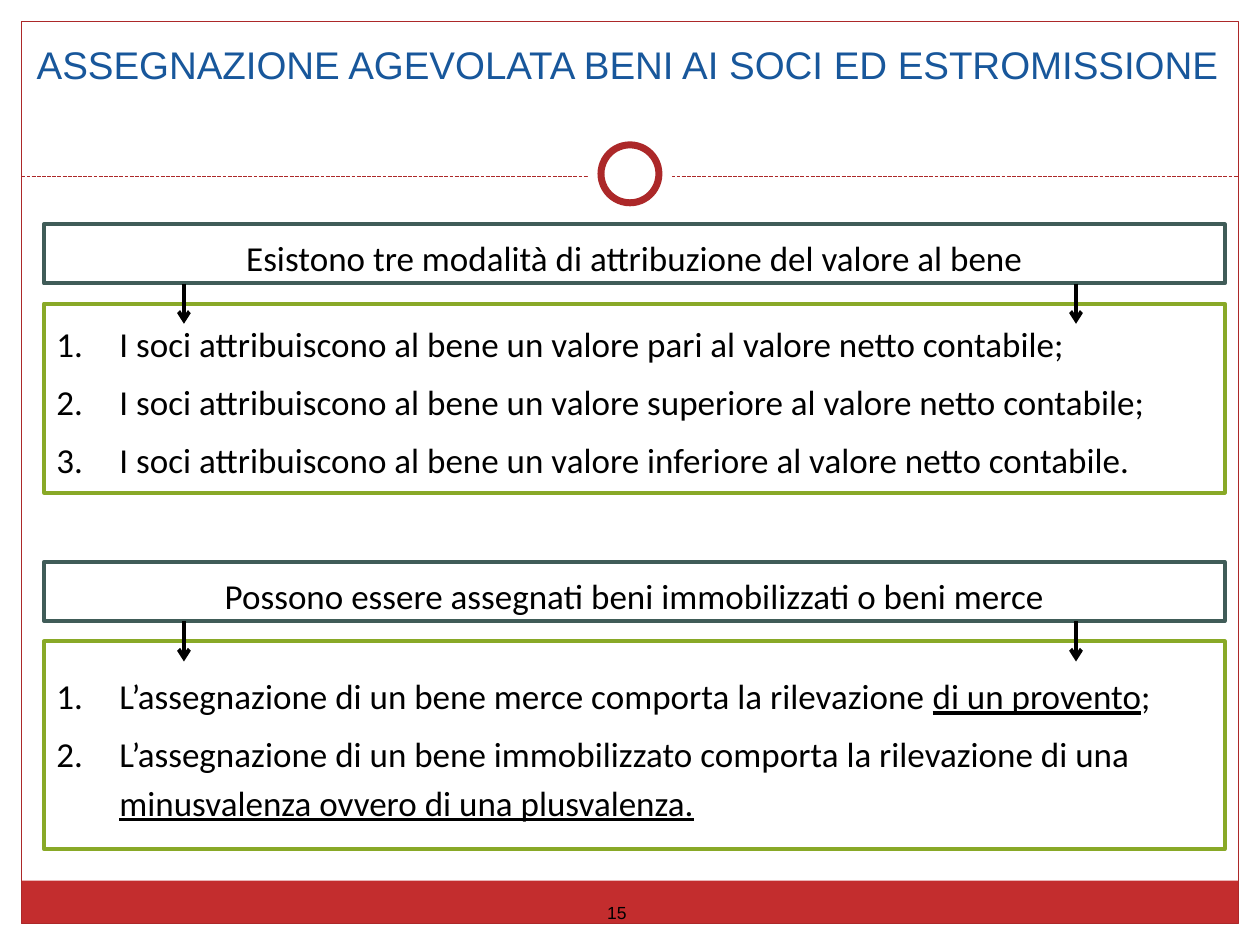
import pptx
import pptx.util
import pptx.dml.color
import pptx.enum.dml
import pptx.enum.shapes
import pptx.enum.text
import pptx.oxml.ns
from lxml import etree

Inches, Pt = pptx.util.Inches, pptx.util.Pt
SHAPE = pptx.enum.shapes.MSO_SHAPE
ALIGN = pptx.enum.text.PP_ALIGN
ANCHOR = pptx.enum.text.MSO_ANCHOR
qn = pptx.oxml.ns.qn

COLORS = {
    "white": "FFFFFF", "black": "000000", "band": "C32D2E", "frame": "AC2829",
    "heading": "405C58", "list": "89A927", "title": "18579B",
}


def rgb(name):
    return pptx.dml.color.RGBColor.from_string(COLORS[name])


def add_box(slide, box, fill=None, line=None, width=0.75, kind=SHAPE.RECTANGLE):
    shape = slide.shapes.add_shape(kind, *map(Inches, box))
    shape.shadow.inherit = False
    if fill:
        shape.fill.solid()
        shape.fill.fore_color.rgb = rgb(fill)
    else:
        shape.fill.background()
    if line:
        shape.line.color.rgb = rgb(line)
        shape.line.width = Pt(width)
    else:
        shape.line.fill.background()
    return shape


def add_line(slide, start, end, color, width):
    line = slide.shapes.add_connector(
        pptx.enum.shapes.MSO_CONNECTOR.STRAIGHT, *map(Inches, start + end))
    line.line.color.rgb = rgb(color)
    line.line.width = Pt(width)
    etree.SubElement(line._element.spPr, qn("a:effectLst"))
    return line


def add_run(paragraph, text, font, size, color="black", underline=None):
    run = paragraph.add_run()
    run.text = text
    run.font.name = font
    run.font.size = Pt(size)
    run.font.color.rgb = rgb(color)
    run.font.underline = underline


def add_label(slide, box, text, size, color, anchor):
    frame = slide.shapes.add_textbox(*map(Inches, box)).text_frame
    frame.word_wrap = True
    frame.vertical_anchor = anchor
    frame.paragraphs[0].alignment = ALIGN.CENTER
    add_run(frame.paragraphs[0], text, "Arial", size, color)


def number_paragraph(paragraph):
    properties = paragraph._p.get_or_add_pPr()
    properties.set("marL", str(Inches(0.5)))
    properties.set("indent", str(-Inches(0.5)))
    etree.SubElement(properties, qn("a:buFont"), typeface="+mj-lt")
    etree.SubElement(properties, qn("a:buAutoNum"), type="arabicPeriod")


def add_frame(slide, box):
    """Red border and footer band, with the dashed divider and its ring."""
    left, top, width, height = box
    band_height = 0.34
    add_box(slide, (left, top + height - band_height, width, band_height), fill="band")
    add_box(slide, box, line="frame")

    divider_y = top + 1.23
    divider = add_line(slide, (left, divider_y), (left + width, divider_y), "frame", 0.75)
    divider.line.dash_style = pptx.enum.dml.MSO_LINE.SQUARE_DOT
    divider.line._ln.find(qn("a:prstDash")).set("val", "sysDash")

    ring_x, ring_y = left + width / 2, divider_y - 0.02
    for size, line in ((0.67, None), (0.46, "frame")):
        add_box(slide, (ring_x - size / 2, ring_y - size / 2, size, size),
                fill="white", line=line, width=4, kind=SHAPE.OVAL)


def add_section(slide, box, heading, items):
    """Heading box, two arrows and the numbered list box below it."""
    left, top, width, height = box
    heading_height, gap = 0.47, 0.16
    list_top = heading_height + gap

    # Numbered list; each item is a list of (text, underlined) pieces
    list_box = add_box(slide, (left, top + list_top, width, height - list_top),
                       line="list", width=2.25)
    list_box.text_frame.vertical_anchor = ANCHOR.MIDDLE
    for index, pieces in enumerate(items):
        frame = list_box.text_frame
        item = frame.add_paragraph() if index else frame.paragraphs[0]
        item.alignment = ALIGN.LEFT
        item.line_spacing = Pt(28)
        item.space_before = Pt(5)
        number_paragraph(item)
        for text, underlined in pieces:
            add_run(item, text, "Calibri", 20, underline=underlined)

    # Heading
    heading_box = add_box(slide, (left, top, width, heading_height),
                          line="heading", width=2.25)
    heading_box.text_frame.vertical_anchor = ANCHOR.MIDDLE
    title = heading_box.text_frame.paragraphs[0]
    title.alignment = ALIGN.CENTER
    title.line_spacing = Pt(28)
    title.space_before = Pt(4)
    add_run(title, heading, "Calibri", 20)

    # Arrows from heading to list
    arrow_top = top + heading_height
    for x in (left + 1.11, left + 8.19):
        arrow = add_line(slide, (x, arrow_top), (x, arrow_top + 2 * gap), "black", 2.25)
        etree.SubElement(arrow.line._ln, qn("a:tailEnd"), type="arrow")


def main():
    deck = pptx.Presentation()
    deck.slide_width, deck.slide_height = Inches(10), Inches(7.5)
    slide = deck.slides.add_slide(deck.slide_layouts[6])

    add_frame(slide, (0.17, 0.17, 9.66, 7.16))
    add_label(slide, (0.12, 0.28, 9.72, 0.55),
              "ASSEGNAZIONE AGEVOLATA BENI AI SOCI ED ESTROMISSIONE",
              22, "title", ANCHOR.TOP)
    add_section(
        slide, (0.35, 1.78, 9.37, 2.13),
        "Esistono tre modalità di attribuzione del valore al bene",
        [[(f"I soci attribuiscono al bene un valore {ending}", None)] for ending in (
            "pari al valore netto contabile;",
            "superiore al valore netto contabile;",
            "inferiore al valore netto contabile.")])
    add_section(
        slide, (0.35, 4.46, 9.37, 2.28),
        "Possono essere assegnati beni immobilizzati o beni merce",
        [[("L’assegnazione di un bene merce comporta la rilevazione ", None),
          ("di un provento", True), (";", None)],
         [("L’assegnazione di un bene immobilizzato comporta la rilevazione di una ", None),
          ("minusvalenza ovvero di una plusvalenza.", True)]])
    add_label(slide, (4.69, 7.11, 0.41, 0.26), "15", 10, "black", ANCHOR.MIDDLE)

    deck.save("out.pptx")


if __name__ == "__main__":
    main()
